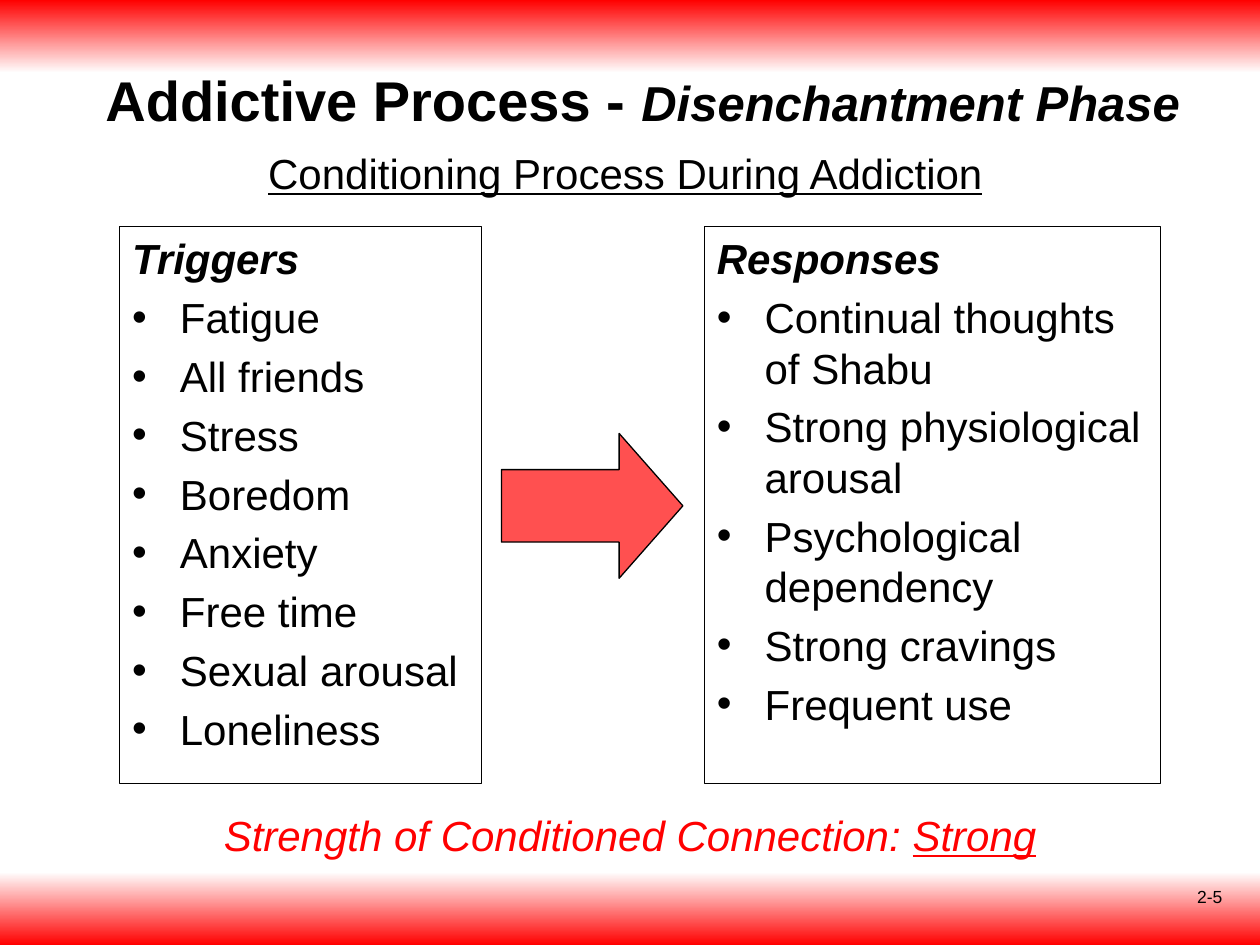
from dataclasses import dataclass

from lxml.etree import SubElement
from pptx import Presentation
from pptx.dml.color import RGBColor
from pptx.enum.shapes import MSO_SHAPE
from pptx.enum.text import MSO_ANCHOR, MSO_AUTO_SIZE, PP_ALIGN
from pptx.oxml.ns import qn
from pptx.util import Inches, Pt


@dataclass(frozen=True)
class Theme:
    font: str = "Arial"
    ink: RGBColor = RGBColor(0, 0, 0)
    paper: RGBColor = RGBColor(255, 255, 255)
    red: RGBColor = RGBColor(255, 0, 0)
    arrow: RGBColor = RGBColor(255, 80, 80)
    title: int = 32
    phase: int = 28
    body: int = 24
    page: int = 10
    outline: float = 0.75
    gap: float = 4.8
    indent: float = 0.38


@dataclass(frozen=True)
class Area:
    """Left, top, width and height in percent of the slide."""
    left: float
    top: float
    width: float
    height: float

    def lengths(self):
        return (
            round(WIDTH * self.left / 100),
            round(HEIGHT * self.top / 100),
            round(WIDTH * self.width / 100),
            round(HEIGHT * self.height / 100),
        )


@dataclass(frozen=True)
class Panel:
    area: Area
    heading: str
    items: tuple[str, ...]


@dataclass(frozen=True)
class Band:
    area: Area
    start: RGBColor
    end: RGBColor


THEME = Theme()
WIDTH, HEIGHT = Inches(10), Inches(7.5)

BANDS = (
    Band(Area(0, 92.27, 100, 7.73), THEME.paper, THEME.red),
    Band(Area(0, 0, 100, 7.73), THEME.red, THEME.paper),
)
PANELS = (
    Panel(Area(9.5, 24, 28.7, 58.93), "Triggers", (
        "Fatigue", "All friends", "Stress", "Boredom", "Anxiety",
        "Free time", "Sexual arousal", "Loneliness",
    )),
    Panel(Area(55.9, 24, 36.2, 58.93), "Responses", (
        "Continual thoughts\nof Shabu", "Strong physiological arousal",
        "Psychological dependency", "Strong cravings", "Frequent use",
    )),
)


def write(paragraph, text: str, *, size=THEME.body, color=THEME.ink,
          bold=False, italic=False, underline=False) -> None:
    for number, line in enumerate(text.split("\n")):
        if number:
            paragraph.add_line_break()
        run = paragraph.add_run()
        run.text = line
        font = run.font
        font.name, font.size = THEME.font, Pt(size)
        font.bold, font.italic, font.underline = bold, italic, underline
        font.color.rgb = color


def add_bullet(paragraph) -> None:
    properties = paragraph._p.get_or_add_pPr()
    properties.set("marL", str(Inches(THEME.indent)))
    properties.set("indent", str(-Inches(THEME.indent)))
    SubElement(properties, qn("a:buFont")).set("typeface", THEME.font)
    SubElement(properties, qn("a:buChar")).set("char", "•")


def add_plain_shape(slide, kind: MSO_SHAPE, area: Area):
    shape = slide.shapes.add_shape(kind, *area.lengths())
    shape.shadow.inherit = False
    return shape


def outline(shape) -> None:
    shape.line.color.rgb = THEME.ink
    shape.line.width = Pt(THEME.outline)


def draw_band(slide, band: Band) -> None:
    strip = add_plain_shape(slide, MSO_SHAPE.RECTANGLE, band.area)
    strip.line.fill.background()
    strip.fill.gradient()
    strip.fill.gradient_angle = 270
    for stop, color in zip(strip.fill.gradient_stops, (band.start, band.end)):
        stop.color.rgb = color


def draw_panel(slide, panel: Panel) -> None:
    frame = add_plain_shape(slide, MSO_SHAPE.RECTANGLE, panel.area)
    frame.fill.background()
    outline(frame)
    content = frame.text_frame
    content.word_wrap = True
    content.vertical_anchor = MSO_ANCHOR.TOP
    heading = content.paragraphs[0]
    write(heading, panel.heading, bold=True, italic=True)
    for item in panel.items:
        entry = content.add_paragraph()
        write(entry, item)
    for paragraph in content.paragraphs:
        paragraph.alignment = PP_ALIGN.LEFT
        paragraph.space_before = Pt(THEME.gap)
    for entry in content.paragraphs[1:]:
        add_bullet(entry)


def draw_arrow(slide, area: Area) -> None:
    arrow = add_plain_shape(slide, MSO_SHAPE.RIGHT_ARROW, area)
    arrow.adjustments[0], arrow.adjustments[1] = 0.5, 0.44
    arrow.fill.solid()
    arrow.fill.fore_color.rgb = THEME.arrow
    outline(arrow)


def add_line(slide, area: Area, *, align=PP_ALIGN.CENTER,
             anchor=MSO_ANCHOR.MIDDLE, wrap=True):
    content = slide.shapes.add_textbox(*area.lengths()).text_frame
    content.word_wrap = wrap
    content.auto_size = MSO_AUTO_SIZE.NONE if wrap else MSO_AUTO_SIZE.SHAPE_TO_FIT_TEXT
    content.vertical_anchor = anchor
    content.paragraphs[0].alignment = align
    return content.paragraphs[0]


def main() -> None:
    deck = Presentation()
    deck.slide_width, deck.slide_height = WIDTH, HEIGHT
    slide = deck.slides.add_slide(deck.slide_layouts[6])

    for band in BANDS:
        draw_band(slide, band)
    for panel in PANELS:
        draw_panel(slide, panel)
    draw_arrow(slide, Area(39.8, 45.87, 14.4, 15.33))

    page = add_line(slide, Area(74.7, 93.07, 23.3, 6.93),
                    align=PP_ALIGN.RIGHT, anchor=MSO_ANCHOR.TOP)
    write(page, "2-5", size=THEME.page)

    title = add_line(slide, Area(7.1, 5.73, 87.8, 9.47))
    write(title, "Addictive Process - ", size=THEME.title, bold=True)
    write(title, "Disenchantment Phase", size=THEME.phase, bold=True, italic=True)

    subtitle = add_line(slide, Area(20.3, 14.93, 59.4, 6.67),
                        align=PP_ALIGN.LEFT, anchor=MSO_ANCHOR.TOP, wrap=False)
    write(subtitle, "Conditioning Process During Addiction", underline=True)

    strength = add_line(slide, Area(7.9, 83.6, 84.2, 9.47))
    write(strength, "Strength of Conditioned Connection: ", color=THEME.red, italic=True)
    write(strength, "Strong", color=THEME.red, italic=True, underline=True)

    deck.save("out.pptx")


if __name__ == "__main__":
    main()
